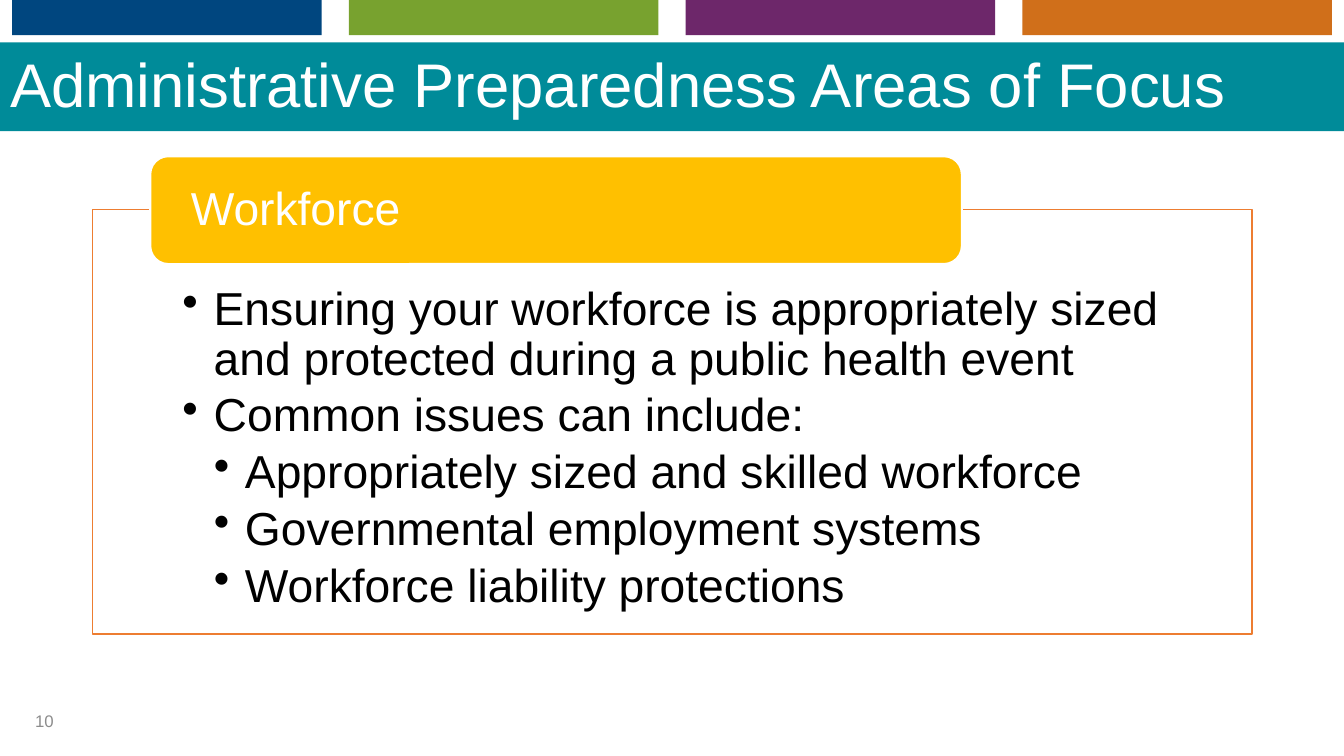
from lxml.etree import SubElement
from pptx import Presentation
from pptx.dml.color import RGBColor
from pptx.enum.shapes import MSO_SHAPE as Shape
from pptx.enum.text import MSO_ANCHOR as Anchor, MSO_AUTO_SIZE as AutoSize, PP_ALIGN as Align
from pptx.oxml.ns import qn
from pptx.util import Inches, Pt

TITLE = "Administrative Preparedness Areas of Focus"
TOPIC = "Workforce"
POINTS = [
    (1, "Ensuring your workforce is appropriately sized and protected during a public health event"),
    (1, "Common issues can include:"),
    (2, "Appropriately sized and skilled workforce"),
    (2, "Governmental employment systems"),
    (2, "Workforce liability protections"),
]
PAGE_NUMBER = "10"

WHITE = RGBColor(0xFF, 0xFF, 0xFF)
BLACK = RGBColor(0, 0, 0)
GRAY = RGBColor(0x8C, 0x8C, 0x8C)
TEAL = RGBColor(0x00, 0x8B, 0x99)
ORANGE = RGBColor(0xED, 0x7D, 0x31)
AMBER = RGBColor(0xFF, 0xC0, 0x00)
TAB_COLORS = [RGBColor(0x00, 0x46, 0x7F), RGBColor(0x78, 0xA2, 0x2F),
              RGBColor(0x6D, 0x27, 0x6A), RGBColor(0xD0, 0x6F, 0x1A)]

WIDTH, HEIGHT = 13.33, 7.5
TAB_LEFT, TAB_WIDTH, TAB_HEIGHT, TAB_STEP = 0.12, 3.07, 0.35, 3.34
FRAME = (0.92, 2.08, 11.5, 4.21)
INDENT = 0.31


def add_block(page, kind, area, fill, line=None, weight=1):
    block = page.shapes.add_shape(kind, *map(Inches, area))
    block.shadow.inherit = False
    block.fill.solid()
    block.fill.fore_color.rgb = fill
    if line is None:
        block.line.fill.background()
    else:
        block.line.color.rgb = line
        block.line.width = Pt(weight)
    return block


def set_frame(box, insets=(0.1, 0.05, 0.1, 0.05), anchor=Anchor.MIDDLE):
    frame = box.text_frame
    frame.word_wrap = True
    frame.auto_size = AutoSize.NONE
    frame.vertical_anchor = anchor
    (frame.margin_left, frame.margin_top,
     frame.margin_right, frame.margin_bottom) = map(Inches, insets)
    return frame


def write(para, text, size, color, spacing=0.9, after=0, bullet_level=0):
    para.alignment = Align.LEFT
    para.line_spacing = spacing
    para.space_before = Pt(0)
    para.space_after = Pt(after)
    if bullet_level:
        para.level = bullet_level
        props = para._p.get_or_add_pPr()
        props.set("marL", str(Inches(INDENT * bullet_level)))
        props.set("indent", str(-Inches(INDENT)))
        SubElement(props, qn("a:buChar")).set("char", "•")
    span = para.add_run()
    span.text = text
    span.font.name = "Arial"
    span.font.size = Pt(size)
    span.font.color.rgb = color


def add_header(page):
    add_block(page, Shape.RECTANGLE, (0, 0.42, WIDTH, 0.88), TEAL)
    for column, color in enumerate(TAB_COLORS):
        left = TAB_LEFT + column * TAB_STEP
        add_block(page, Shape.RECTANGLE, (left, 0, TAB_WIDTH, TAB_HEIGHT), color)
    title = page.shapes.title
    title.left, title.top, title.width, title.height = map(Inches, (0, 0.48, WIDTH, 0.77))
    write(set_frame(title).paragraphs[0], TITLE, 44, WHITE)
    page.shapes._spTree.append(title._element)  # bring the title in front of its band


def add_topic(page):
    panel = add_block(page, Shape.RECTANGLE, FRAME, WHITE, line=ORANGE)
    color = panel.fill._xPr.find(qn("a:solidFill"))[0]
    SubElement(color, qn("a:alpha")).set("val", "90000")
    frame = set_frame(panel, (0.89, 0.75, 0.89, 0.26), Anchor.TOP)
    for index, (level, text) in enumerate(POINTS):
        para = frame.add_paragraph() if index else frame.paragraphs[0]
        write(para, text, 33, BLACK, after=5, bullet_level=level)

    label = add_block(page, Shape.ROUNDED_RECTANGLE, (1.49, 1.55, 8.05, 1.07),
                      AMBER, line=WHITE, weight=1.5)
    write(set_frame(label, (0.35, 0, 0.35, 0)).paragraphs[0], TOPIC, 33, WHITE)


def main():
    deck = Presentation()
    deck.slide_width, deck.slide_height = Inches(WIDTH), Inches(HEIGHT)
    page = deck.slides.add_slide(deck.slide_layouts[5])
    add_header(page)
    add_topic(page)
    number = page.shapes.add_textbox(*map(Inches, (0.25, 6.95, 3, 0.4)))
    write(set_frame(number).paragraphs[0], PAGE_NUMBER, 12, GRAY, spacing=1)
    deck.save("out.pptx")


if __name__ == "__main__":
    main()
